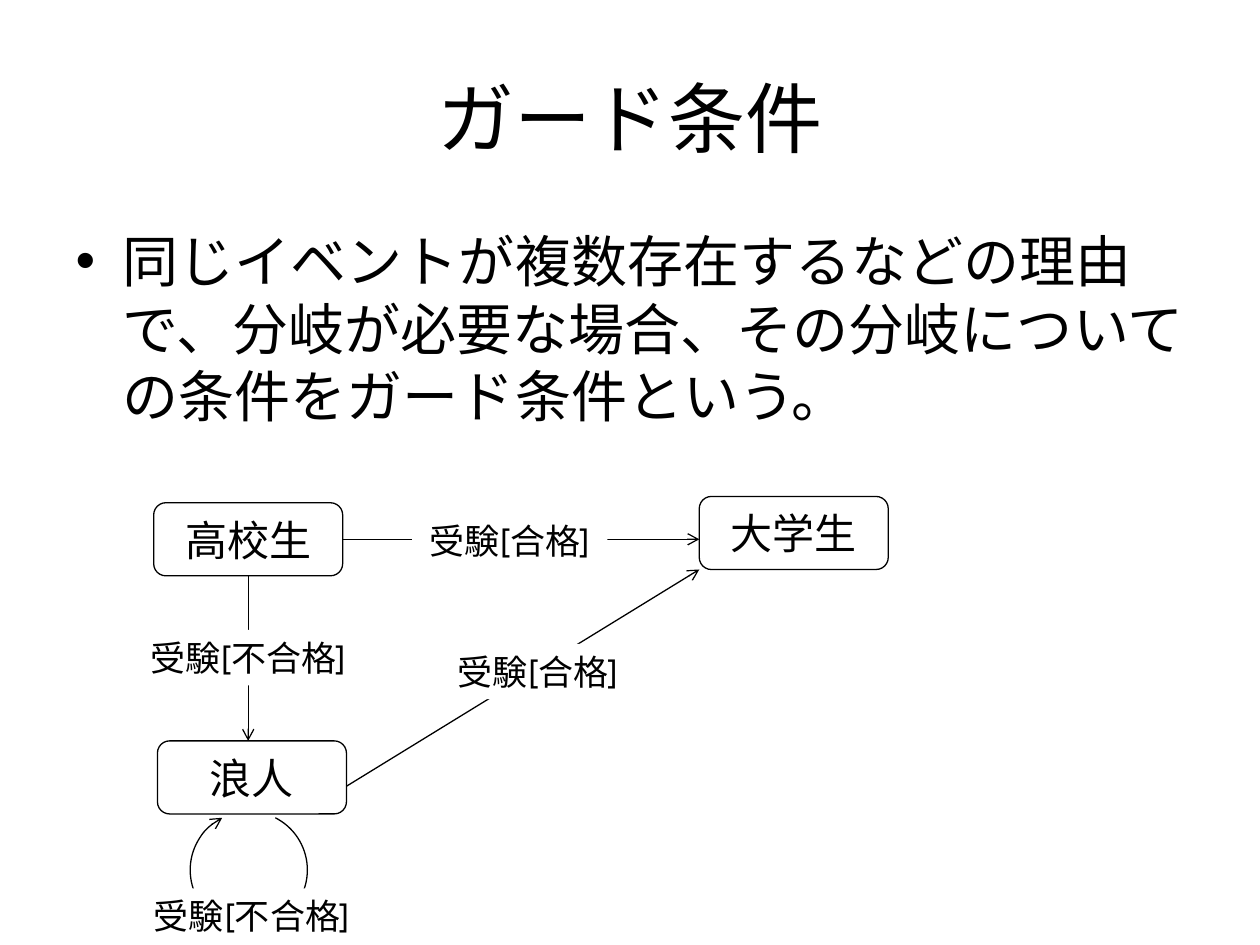
from lxml import etree
from pptx import Presentation
from pptx.dml.color import RGBColor
from pptx.enum.shapes import MSO_CONNECTOR, MSO_SHAPE
from pptx.enum.text import MSO_ANCHOR, MSO_AUTO_SIZE, PP_ALIGN
from pptx.oxml.ns import qn
from pptx.util import Inches, Pt

STRAIGHT = MSO_CONNECTOR.STRAIGHT
STATE, LABEL, ARC = MSO_SHAPE.FLOWCHART_ALTERNATE_PROCESS, MSO_SHAPE.RECTANGLE, MSO_SHAPE.ARC
CENTER, TOP, MIDDLE = PP_ALIGN.CENTER, MSO_ANCHOR.TOP, MSO_ANCHOR.MIDDLE
GROW = MSO_AUTO_SIZE.SHAPE_TO_FIT_TEXT
BLACK, WHITE = "000000", "FFFFFF"
BOTTOM, RIGHT = 2, 3


def rgb(value):
    return RGBColor.from_string(value)


def place(sp, left, top, width, height):
    sp.left, sp.top = Inches(left), Inches(top)
    sp.width, sp.height = Inches(width), Inches(height)


def set_text(sp, text, size, font, align=None):
    sp.text_frame.text = text
    p = sp.text_frame.paragraphs[0]
    p.alignment = align
    p.font.size, p.font.name = Pt(size), font
    p.font.color.rgb = rgb(BLACK)


def add_shape(slide, kind, left, top, width, height):
    sp = slide.shapes.add_shape(kind, Inches(left), Inches(top), Inches(width), Inches(height))
    sp.shadow.inherit = False
    return sp


def set_outline(sp, arrow=False):
    sp.line.color.rgb = rgb(BLACK)
    sp.line.width = Pt(0.75)
    if arrow:
        etree.SubElement(sp.line._get_or_add_ln(), qn("a:tailEnd"), type="arrow")


def add_state(slide, left, top, text):
    sp = add_shape(slide, STATE, left, top, 1.5, 0.58)
    sp.fill.background()
    set_outline(sp)
    set_text(sp, text, 24, "Karla", CENTER)
    sp.text_frame.word_wrap = False
    sp.text_frame.vertical_anchor = MIDDLE
    return sp


def add_transition(slide, start, end, source=None, side=None):
    """Arrow between two points, joined to a side of the source state if given."""
    line = slide.shapes.add_connector(STRAIGHT, *map(Inches, start + end))
    if source is not None:
        line.begin_connect(source, side)
    set_outline(line, arrow=True)
    etree.SubElement(line._element.spPr, qn("a:effectLst"))


def add_self_transition(slide, left, top, size):
    """Clockwise loop that leaves and re-enters the state above it."""
    sp = add_shape(slide, ARC, left, top, size, size)
    for i, degrees in enumerate((297, 243)):
        sp.adjustments[i] = degrees * 60000 / 100000
    sp.fill.background()
    set_outline(sp, arrow=True)


def add_label(slide, left, top, text, width=2):
    sp = add_shape(slide, LABEL, left, top, width, 0.44)
    sp.fill.solid()
    sp.fill.fore_color.rgb = rgb(WHITE)
    sp.line.fill.background()
    set_text(sp, text, 20, "Karla", CENTER)
    tf = sp.text_frame
    tf.word_wrap, tf.auto_size, tf.vertical_anchor = True, GROW, TOP


def add_heading(slide, left, top, width):
    title, body = slide.shapes.title, slide.placeholders[1]
    place(title, left, top, width, 1.25)
    set_text(title, "ガード条件", 44, "Calibri", CENTER)
    place(body, left, top + 1.45, width, 4.95)
    set_text(body, "同じイベントが複数存在するなどの理由で、分岐が必要な場合、"
             "その分岐についての条件をガード条件という。", 32, "Calibri")


def add_state_diagram(slide, x, y):
    student = add_state(slide, x + 0.25, y + 0.05, "高校生")
    add_state(slide, x + 4.58, y, "大学生")
    add_state(slide, x + 0.28, y + 1.94, "浪人")

    add_transition(slide, (x + 1.75, y + 0.34), (x + 4.58, y + 0.34), student, RIGHT)
    add_transition(slide, (x + 1, y + 0.63), (x + 1, y + 1.94), student, BOTTOM)
    add_transition(slide, (x + 1.78, y + 2.3), (x + 4.58, y + 0.58))
    add_self_transition(slide, x + 0.54, y + 2.5, 0.93)

    passed, failed = "受験[合格]", "受験[不合格]"
    add_label(slide, x + 2.3, y + 1.17, passed)
    add_label(slide, x, y + 1.06, failed)
    add_label(slide, x + 2.3, y + 0.13, passed, width=1.55)
    add_label(slide, x + 0.03, y + 3.11, failed)


def main():
    prs = Presentation()
    prs.slide_width, prs.slide_height = Inches(10), Inches(7.5)
    slide = prs.slides.add_slide(prs.slide_layouts[1])
    add_heading(slide, 0.5, 0.3, 9)
    add_state_diagram(slide, 0.97, 3.94)
    prs.save("out.pptx")


if __name__ == "__main__":
    main()
